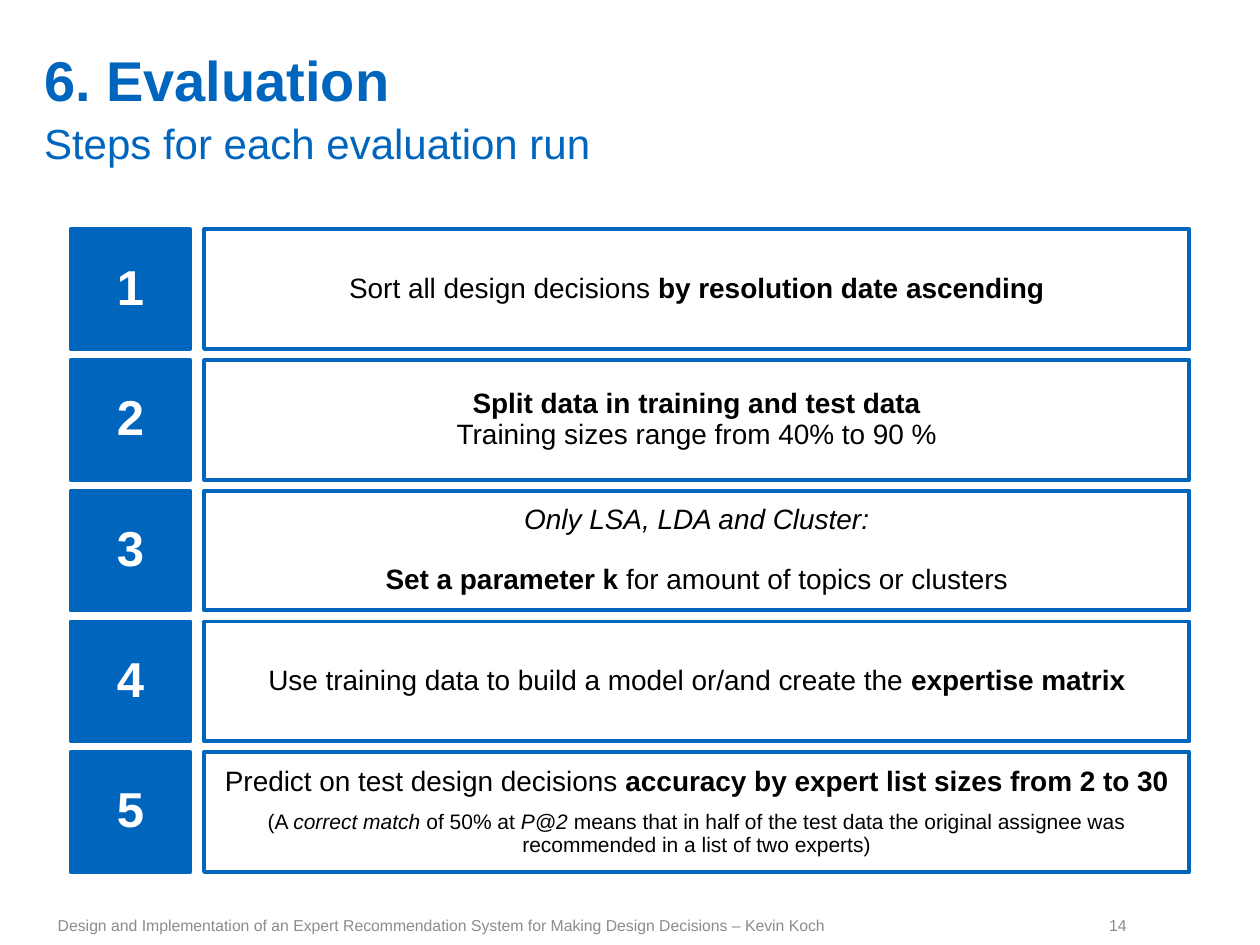
"""Build the slide listing the five steps of each evaluation run."""
from dataclasses import dataclass

from pptx import Presentation
from pptx.dml.color import RGBColor
from pptx.enum.shapes import MSO_SHAPE
from pptx.enum.text import MSO_ANCHOR, PP_ALIGN
from pptx.util import Inches, Pt

RECTANGLE = MSO_SHAPE.RECTANGLE
TOP, MIDDLE = MSO_ANCHOR.TOP, MSO_ANCHOR.MIDDLE
LEFT, CENTER, RIGHT = PP_ALIGN.LEFT, PP_ALIGN.CENTER, PP_ALIGN.RIGHT

FONT = "Arial"
COLORS = {"blue": "0065BD", "white": "FFFFFF", "black": "000000", "gray": "8C8C8C"}

SLIDE_WIDTH, SLIDE_HEIGHT = 10, 7.5
FIRST_TOP, LAST_TOP = 1.82, 5.97
NUMBER_LEFT, DETAIL_LEFT = 0.56, 1.62
ROW_HEIGHT, DETAIL_WIDTH = 0.95, 7.82
FOOTER_TOP, FOOTER_HEIGHT = 7.18, 0.32
STEP_INSETS = (0.12, 0.08)
FOOTER_INSETS = (0.1, 0.05)


@dataclass(frozen=True)
class Span:
    text: str
    bold: bool = False
    italic: bool = False


@dataclass(frozen=True)
class Line:
    spans: tuple[Span, ...]
    size: float = 16
    color: str = "black"
    before: float = 0


@dataclass(frozen=True)
class Box:
    left: float
    top: float
    width: float
    height: float


STEPS = (
    (Line((Span("Sort all design decisions "),
           Span("by resolution date ascending", bold=True))),),
    (Line((Span("Split data in training and test data", bold=True),)),
     Line((Span("Training sizes range from 40% to 90 %"),))),
    (Line((Span("Only LSA, LDA and Cluster:", italic=True),)),
     Line((Span("Set a parameter k ", bold=True),
           Span("for amount of topics or clusters")), before=17)),
    (Line((Span("Use training data to build a model or/and create the "),
           Span("expertise matrix", bold=True))),),
    (Line((Span("Predict on test design decisions "),
           Span("accuracy by expert list sizes from 2 to 30", bold=True))),
     Line((Span("(A "), Span("correct match ", italic=True), Span("of 50% at "),
           Span("P@2", italic=True),
           Span(" means that in half of the test data the original assignee was "
                "recommended in a list of two experts)")), size=12, before=8)),
)


def rgb(name: str) -> RGBColor:
    return RGBColor.from_string(COLORS[name])


def write(frame, lines: tuple[Line, ...], align, anchor,
          insets: tuple[float, float], spacing: float = 1.0) -> None:
    frame.word_wrap = True
    frame.vertical_anchor = anchor
    frame.margin_left = frame.margin_right = Inches(insets[0])
    frame.margin_top = frame.margin_bottom = Inches(insets[1])
    for index, line in enumerate(lines):
        paragraph = frame.add_paragraph() if index else frame.paragraphs[0]
        paragraph.alignment = align
        paragraph.line_spacing = spacing
        if line.before:
            paragraph.space_before = Pt(line.before)
        for span in line.spans:
            run = paragraph.add_run()
            run.text = span.text
            run.font.name = FONT
            run.font.size = Pt(line.size)
            run.font.bold = span.bold
            run.font.italic = span.italic
            run.font.color.rgb = rgb(line.color)


def inches(box: Box) -> tuple:
    return tuple(Inches(value) for value in (box.left, box.top, box.width, box.height))


def add_text(slide, box: Box, lines: tuple[Line, ...], align, anchor,
             insets: tuple[float, float], spacing: float = 1.0) -> None:
    label = slide.shapes.add_textbox(*inches(box))
    write(label.text_frame, lines, align, anchor, insets, spacing)


def add_panel(slide, box: Box, lines: tuple[Line, ...], filled: bool) -> None:
    panel = slide.shapes.add_shape(RECTANGLE, *inches(box))
    panel.shadow.inherit = False
    if filled:
        panel.fill.solid()
        panel.fill.fore_color.rgb = rgb("blue")
    else:
        panel.fill.background()
    panel.line.color.rgb = rgb("blue")
    panel.line.width = Pt(2.25)
    write(panel.text_frame, lines, CENTER, MIDDLE, STEP_INSETS, 0.9)


def add_step(slide, index: int, detail: tuple[Line, ...]) -> None:
    pitch = (LAST_TOP - FIRST_TOP) / (len(STEPS) - 1)
    top = FIRST_TOP + index * pitch
    number = (Line((Span(str(index + 1), bold=True),), size=28, color="white"),)
    add_panel(slide, Box(NUMBER_LEFT, top, ROW_HEIGHT, ROW_HEIGHT), number, True)
    add_panel(slide, Box(DETAIL_LEFT, top, DETAIL_WIDTH, ROW_HEIGHT), detail, False)


def add_footer(slide, left: float, width: float, text: str, align) -> None:
    add_text(slide, Box(left, FOOTER_TOP, width, FOOTER_HEIGHT),
             (Line((Span(text),), size=9, color="gray"),), align, MIDDLE, FOOTER_INSETS)


def main() -> None:
    presentation = Presentation()
    presentation.slide_width = Inches(SLIDE_WIDTH)
    presentation.slide_height = Inches(SLIDE_HEIGHT)
    slide = presentation.slides.add_slide(presentation.slide_layouts[6])

    heading = (Line((Span("6. Evaluation", bold=True),), size=32, color="blue"),
               Line((Span("Steps for each evaluation run"),), size=24, color="blue"))
    add_text(slide, Box(0.35, 0.31, 8.94, 1.17), heading, LEFT, TOP, (0, 0), 1.1)
    for index, detail in enumerate(STEPS):
        add_step(slide, index, detail)
    add_footer(slide, 0.36, 8.01, "Design and Implementation of an Expert Recommendation "
               "System for Making Design Decisions – Kevin Koch", LEFT)
    add_footer(slide, 8.37, 0.67, "14", RIGHT)
    presentation.save("out.pptx")


if __name__ == "__main__":
    main()
